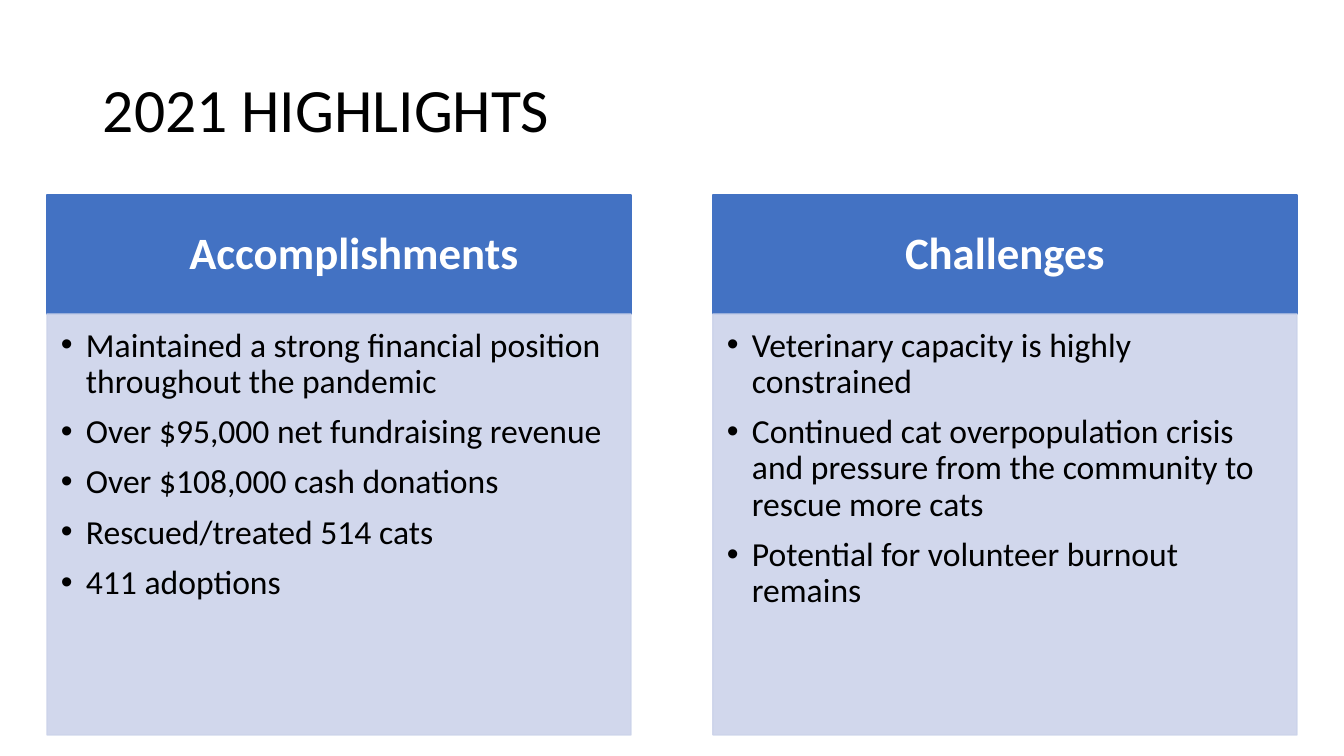
import pptx
import pptx.dml.color
import pptx.enum.shapes
import pptx.enum.text
import pptx.oxml.ns
import pptx.util
from lxml import etree

PX = 914400 / 100.8
FONT = "Calibri"
HEADER_H = 119
COLUMNS = [
    (47, 30, "Accomplishments", [
        "Maintained a strong financial position throughout the pandemic",
        "Over $95,000 net fundraising revenue",
        "Over $108,000 cash donations",
        "Rescued/treated 514 cats",
        "411 adoptions",
    ]),
    (713, 0, "Challenges", [
        "Veterinary capacity is highly constrained",
        "Continued cat overpopulation crisis and pressure from the community to rescue more cats",
        "Potential for volunteer burnout remains",
    ]),
]


def px(n):
    return pptx.util.Emu(round(n * PX))


def rgb(value):
    return pptx.dml.color.RGBColor.from_string(value)


def sub(parent, tag, **attrs):
    return etree.SubElement(parent, pptx.oxml.ns.qn(tag), attrs)


def style(p, size, color, bold=False):
    p.line_spacing = 0.9
    p.font.name = FONT
    p.font.size = pptx.util.Pt(size)
    p.font.bold = bold
    p.font.color.rgb = rgb(color)


def set_frame(tf, anchor, left, top, right, bottom):
    tf.word_wrap = True
    tf.vertical_anchor = anchor
    tf.margin_left, tf.margin_top = px(left), px(top)
    tf.margin_right, tf.margin_bottom = px(right), px(bottom)


def add_panel(slide, x, y, w, h, color, alpha=100):
    sp = slide.shapes.add_shape(pptx.enum.shapes.MSO_SHAPE.RECTANGLE,
                                px(x), px(y), px(w), px(h))
    sp.shadow.inherit = False
    sp.fill.solid()
    sp.fill.fore_color.rgb = rgb(color)
    sp.line.color.rgb = rgb(color)
    sp.line.width = pptx.util.Pt(1)
    if alpha < 100:
        for clr in sp.element.spPr.iter(pptx.oxml.ns.qn("a:srgbClr")):
            sub(clr, "a:alpha", val=str(alpha * 1000))
    return sp


def add_bullet(p, text):
    p.text = text
    p.alignment = pptx.enum.text.PP_ALIGN.LEFT
    p.level = 1
    p.space_before = pptx.util.Pt(10)
    pPr = p._p.get_or_add_pPr()
    pPr.set("marL", str(px(25)))
    pPr.set("indent", str(px(-25)))
    sub(sub(pPr, "a:buClr"), "a:srgbClr", val="000000")
    sub(pPr, "a:buFont", typeface="Arial")
    sub(pPr, "a:buChar", char="•")
    style(p, 24, "000000")


def add_title(slide, x, y, w, h):
    title = slide.shapes.title
    title.left, title.top, title.width, title.height = px(x), px(y), px(w), px(h)
    set_frame(title.text_frame, pptx.enum.text.MSO_ANCHOR.MIDDLE, 10, 5, 10, 5)
    p = title.text_frame.paragraphs[0]
    p.text = "2021 HIGHLIGHTS"
    p.alignment = pptx.enum.text.PP_ALIGN.LEFT
    style(p, 44, "000000")


def add_column(slide, x, y, w, h, shift, heading, items):
    header = add_panel(slide, x, y, w, HEADER_H, "4372C3")
    tf = header.text_frame
    set_frame(tf, pptx.enum.text.MSO_ANCHOR.MIDDLE, 25 + shift, 14, 25, 14)
    p = tf.paragraphs[0]
    p.text = heading
    p.alignment = pptx.enum.text.PP_ALIGN.CENTER
    style(p, 32, "FFFFFF", bold=True)

    body = add_panel(slide, x, y + HEADER_H, w, h - HEADER_H, "CCD3EA", alpha=89)
    tf = body.text_frame
    set_frame(tf, pptx.enum.text.MSO_ANCHOR.TOP, 14, 14, 19, 21)
    for i, item in enumerate(items):
        add_bullet(tf.add_paragraph() if i else tf.paragraphs[0], item)


def main():
    prs = pptx.Presentation()
    prs.slide_width, prs.slide_height = px(1344), px(756)
    slide = prs.slides.add_slide(prs.slide_layouts[5])
    add_title(slide, 93, 40, 1159, 146)
    for x, shift, heading, items in COLUMNS:
        add_column(slide, x, 195, 584, 540, shift, heading, items)
    prs.save("out.pptx")


if __name__ == "__main__":
    main()
